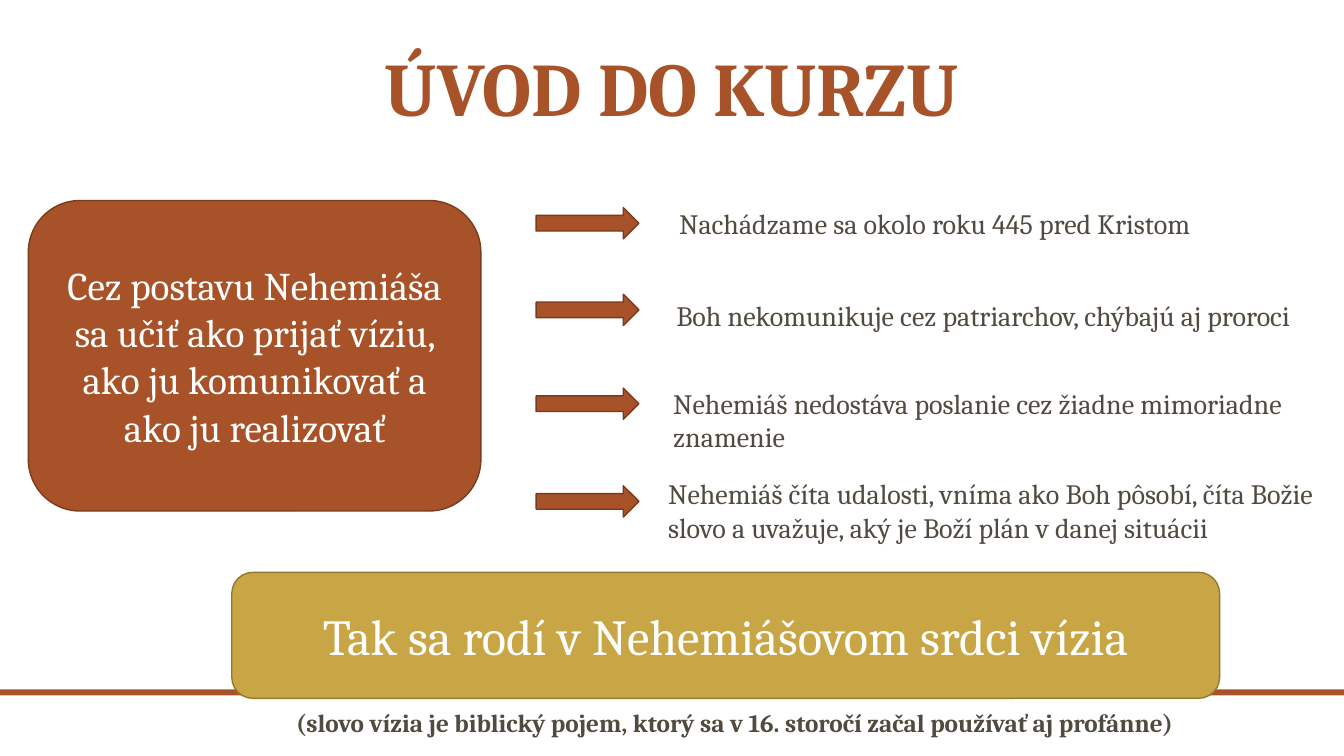
"""Build the course introduction slide about Nehemiáš."""
from pptx import Presentation
from pptx import util as u
from pptx.dml.color import RGBColor
from pptx.enum import shapes, text

RUST = RGBColor(0xA8, 0x52, 0x29)
DARK_RUST = RGBColor(0x7A, 0x3B, 0x1D)
GOLD = RGBColor(0xC9, 0xA6, 0x45)
DARK_GOLD = RGBColor(0x92, 0x79, 0x32)
BROWN = RGBColor(0x51, 0x4A, 0x40)
WHITE = RGBColor(0xFF, 0xFF, 0xFF)

presentation = Presentation()
presentation.slide_width = u.Pt(960)
presentation.slide_height = u.Pt(540)
slide = presentation.slides.add_slide(presentation.slide_layouts[6])


def add_block(kind, box, fill, outline=None):
    """Add a filled preset shape, with a thin outline if one is given."""
    shape = slide.shapes.add_shape(kind, *map(u.Pt, box))
    shape.shadow.inherit = False
    shape.fill.solid()
    shape.fill.fore_color.rgb = fill
    if outline is None:
        shape.line.fill.background()
    else:
        shape.line.color.rgb = outline
        shape.line.width = u.Pt(1)
    return shape


def write(shape, wording, anchor, alignment, font_format):
    """Put one formatted paragraph into a shape."""
    frame = shape.text_frame
    frame.word_wrap = True
    frame.vertical_anchor = anchor
    paragraph = frame.paragraphs[0]
    paragraph.alignment = alignment
    run = paragraph.add_run()
    run.text = wording
    run.font.name = "Cambria"
    run.font.color.rgb = font_format["color"]
    for name in ("size", "bold"):
        setattr(run.font, name, font_format.get(name))
    return paragraph


CENTER, LEFT = text.PP_ALIGN.CENTER, text.PP_ALIGN.LEFT
TOP, MIDDLE, BOTTOM = (text.MSO_ANCHOR.TOP, text.MSO_ANCHOR.MIDDLE,
                       text.MSO_ANCHOR.BOTTOM)

add_block(shapes.MSO_SHAPE.RECTANGLE, (0, 492.5, 960, 4.3), RUST)

panels = [
    ((20.2, 143.2, 323.3, 221.8), RUST, DARK_RUST, 28,
     "Cez postavu Nehemiáša sa učiť ako prijať víziu, "
     "ako ju komunikovať a ako ju realizovať"),
    ((165.6, 408.8, 705.6, 90), GOLD, DARK_GOLD, 36,
     "Tak sa rodí v Nehemiášovom srdci vízia"),
]
for box, fill, outline, size, wording in panels:
    panel = add_block(shapes.MSO_SHAPE.ROUNDED_RECTANGLE, box, fill, outline)
    write(panel, wording, MIDDLE, CENTER, {"color": WHITE, "size": u.Pt(size)})

for arrow_top in (148.3, 210.2, 277.2, 347):
    add_block(shapes.MSO_SHAPE.RIGHT_ARROW, (383, arrow_top, 73.4, 22.3),
              RUST, DARK_RUST)

title_format = {"color": RUST, "size": u.Pt(54), "bold": True}
point_format = {"color": BROWN, "size": u.Pt(20)}
note_format = {"color": BROWN, "size": u.Pt(18), "bold": True}
labels = [
    ((102, 8.6, 756, 90), BOTTOM, CENTER, title_format, 0.9,
     "ÚVOD DO KURZU"),
    ((478, 144, 404, 31), TOP, LEFT, point_format, 1,
     "Nachádzame sa okolo roku 445 pred Kristom"),
    ((476, 209.5, 479.5, 31), TOP, LEFT, point_format, 1,
     "Boh nekomunikuje cez patriarchov, chýbajú aj proroci"),
    ((473.8, 272.2, 479.5, 55.4), TOP, LEFT, point_format, 1,
     "Nehemiáš nedostáva poslanie cez žiadne mimoriadne znamenie"),
    ((470.2, 337, 492.5, 55.4), TOP, LEFT, point_format, 1,
     "Nehemiáš číta udalosti, vníma ako Boh pôsobí, číta Božie slovo "
     "a uvažuje, aký je Boží plán v danej situácii"),
    ((204.5, 501.8, 738.7, 28.8), TOP, LEFT, note_format, 1,
     "(slovo vízia je biblický pojem, ktorý sa v 16. storočí "
     "začal používať aj profánne)"),
]
for box, anchor, alignment, font_format, spacing, wording in labels:
    label = slide.shapes.add_textbox(*map(u.Pt, box))
    paragraph = write(label, wording, anchor, alignment, font_format)
    paragraph.line_spacing = spacing

presentation.save("out.pptx")
